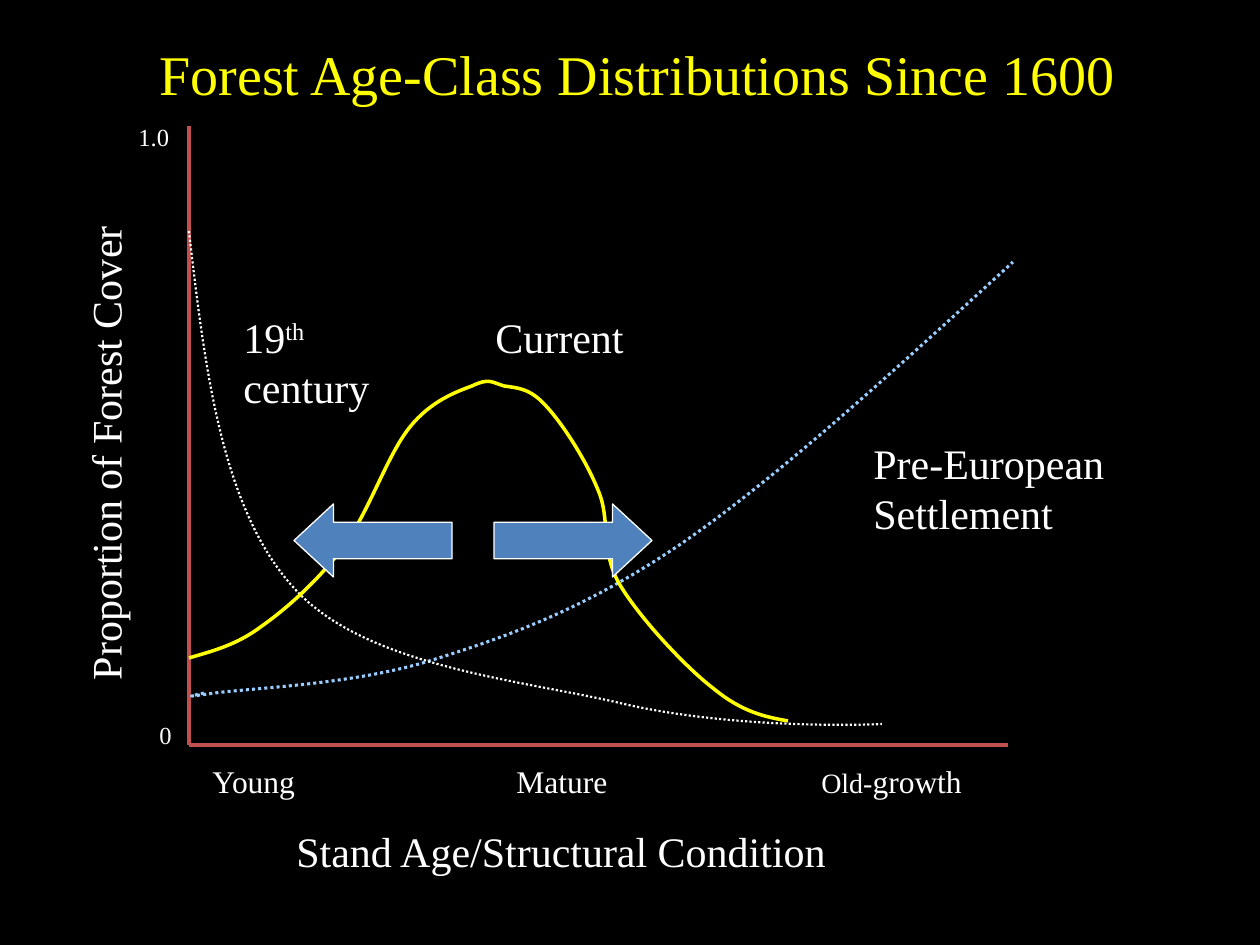
from dataclasses import dataclass

from lxml.etree import SubElement
from pptx import Presentation
from pptx.dml.color import RGBColor
from pptx.enum.dml import MSO_LINE
from pptx.enum.shapes import MSO_CONNECTOR, MSO_SHAPE
from pptx.enum.text import MSO_ANCHOR, MSO_AUTO_SIZE, PP_ALIGN
from pptx.oxml.ns import qn
from pptx.util import Emu, Pt

SCALE = 914400 / 126  # EMU in one px
FONT = "Times New Roman"
WHITE, YELLOW, RED, BLUE, SKY = "FFFFFF", "FFFF00", "C0504D", "4F81BD", "99CCFF"


@dataclass
class Label:
    text: str
    left: int
    top: int
    width: int
    height: int
    size: int = 24
    rotation: int = 0


@dataclass
class Curve:
    """Points run: start, then two handles and an end for each segment."""
    points: list[tuple[int, int]]
    color: str
    weight: float
    dash: MSO_LINE | None = None


LABELS = [
    Label("Stand Age/Structural Condition", 284, 819, 683, 63),
    Label("Young", 200, 756, 158, 50, size=18),
    Label("Mature", 504, 756, 158, 50, size=18),
    Label("Current", 483, 305, 179, 63),
    Label("Pre-European Settlement", 861, 431, 325, 115),
    Label("Proportion of Forest Cover", -152, 404, 514, 63, rotation=270),
    Label("1.0", 126, 116, 84, 42, size=14),
    Label("0", 147, 714, 84, 42, size=14),
]
OLD_GROWTH = Label("Old-", 809, 756, 210, 50, size=16)
CENTURY = Label("19", 231, 305, 179, 115)

PRE_EUROPEAN = Curve([
    (204, 693), (192, 696), (179, 698), (215, 693), (252, 688), (348, 685), (426, 662),
    (503, 638), (580, 612), (678, 546), (775, 480), (895, 370), (1013, 262),
], SKY, 1.75, MSO_LINE.ROUND_DOT)
NINETEENTH = Curve([
    (189, 231), (205, 370), (222, 509), (294, 588), (365, 667), (522, 680), (620, 703),
    (717, 726), (838, 726), (882, 724),
], WHITE, 1.25, MSO_LINE.ROUND_DOT)
CURRENT = Curve([
    (189, 658), (213, 651), (237, 645), (262, 626), (289, 607), (323, 576), (346, 543),
    (370, 509), (388, 454), (410, 427), (431, 401), (456, 392), (472, 386),
    (489, 378), (491, 382), (504, 386), (517, 388), (530, 388), (546, 406),
    (562, 423), (586, 460), (598, 490), (611, 519), (600, 552), (620, 585),
    (639, 617), (685, 667), (714, 689), (742, 712), (765, 717), (788, 721),
], YELLOW, 2)


def px(length: int) -> Emu:
    return Emu(round(length * SCALE))


def rgb(color: str) -> RGBColor:
    return RGBColor.from_string(color)


def add_span(para, text: str, *, size: int = 24, color: str = WHITE, raised: bool = False):
    span = para.add_run()
    span.text = text
    span.font.name = FONT
    span.font.size = Pt(size)
    span.font.color.rgb = rgb(color)
    if raised:
        span.font._element.set("baseline", "30000")


def add_label(page, label: Label):
    box = page.shapes.add_textbox(
        px(label.left), px(label.top), px(label.width), px(label.height))
    box.rotation = label.rotation
    box.text_frame.word_wrap = True
    para = box.text_frame.paragraphs[0]
    add_span(para, label.text, size=label.size)
    return para


def add_axis(page, start: tuple[int, int], end: tuple[int, int]) -> None:
    axis = page.shapes.add_connector(
        MSO_CONNECTOR.STRAIGHT, *(px(value) for value in start + end))
    axis.line.color.rgb = rgb(RED)
    axis.line.width = Pt(2)
    SubElement(axis._element.spPr, qn("a:effectLst"))


def add_curve(page, curve: Curve) -> None:
    builder = page.shapes.build_freeform(*curve.points[0], scale=SCALE)
    builder.add_line_segments(curve.points[1:], close=False)
    shape = builder.convert_to_shape()
    # Join every three straight steps into one Bezier segment
    outline = shape._element.find(".//" + qn("a:path"))
    steps = outline.findall(qn("a:lnTo"))
    for first in range(0, len(steps), 3):
        bezier = SubElement(outline, qn("a:cubicBezTo"))
        for step in steps[first:first + 3]:
            bezier.append(step[0])
            outline.remove(step)
    shape.shadow.inherit = False
    shape.fill.background()
    shape.line.color.rgb = rgb(curve.color)
    shape.line.width = Pt(curve.weight)
    if curve.dash is not None:
        shape.line.dash_style = curve.dash


def add_arrow(page, kind: MSO_SHAPE, left: int) -> None:
    arrow = page.shapes.add_shape(kind, px(left), px(504), px(158), px(73))
    arrow.adjustments[1] = 0.54
    arrow.shadow.inherit = False
    arrow.fill.solid()
    arrow.fill.fore_color.rgb = rgb(BLUE)
    arrow.line.color.rgb = rgb(WHITE)
    arrow.line.width = Pt(0.75)


def set_title(page, text: str) -> None:
    title = page.shapes.title
    title.left, title.top, title.width, title.height = px(147), px(33), px(984), px(80)
    frame = title.text_frame
    frame.word_wrap = True
    frame.auto_size = MSO_AUTO_SIZE.NONE
    frame.vertical_anchor = MSO_ANCHOR.TOP
    para = frame.paragraphs[0]
    para.alignment = PP_ALIGN.LEFT
    add_span(para, text, size=32, color=YELLOW)


def main() -> None:
    deck = Presentation()
    deck.slide_width, deck.slide_height = px(1260), px(945)
    page = deck.slides.add_slide(deck.slide_layouts[5])
    page.background.fill.solid()
    page.background.fill.fore_color.rgb = rgb("000000")
    set_title(page, "Forest Age-Class Distributions Since 1600")

    # Axes
    origin = (189, 745)
    add_axis(page, (189, 126), origin)
    add_axis(page, origin, (1008, 745))

    # Age-class curves
    for curve in (PRE_EUROPEAN, NINETEENTH, CURRENT):
        add_curve(page, curve)

    # Labels, two of them with mixed formats
    for label in LABELS:
        add_label(page, label)
    add_span(add_label(page, OLD_GROWTH), "growth", size=18)
    century = add_label(page, CENTURY)
    add_span(century, "th", raised=True)
    add_span(century, " century")

    # Arrows pointing away from the current peak
    add_arrow(page, MSO_SHAPE.LEFT_ARROW, 294)
    add_arrow(page, MSO_SHAPE.RIGHT_ARROW, 494)

    deck.save("out.pptx")


if __name__ == "__main__":
    main()
